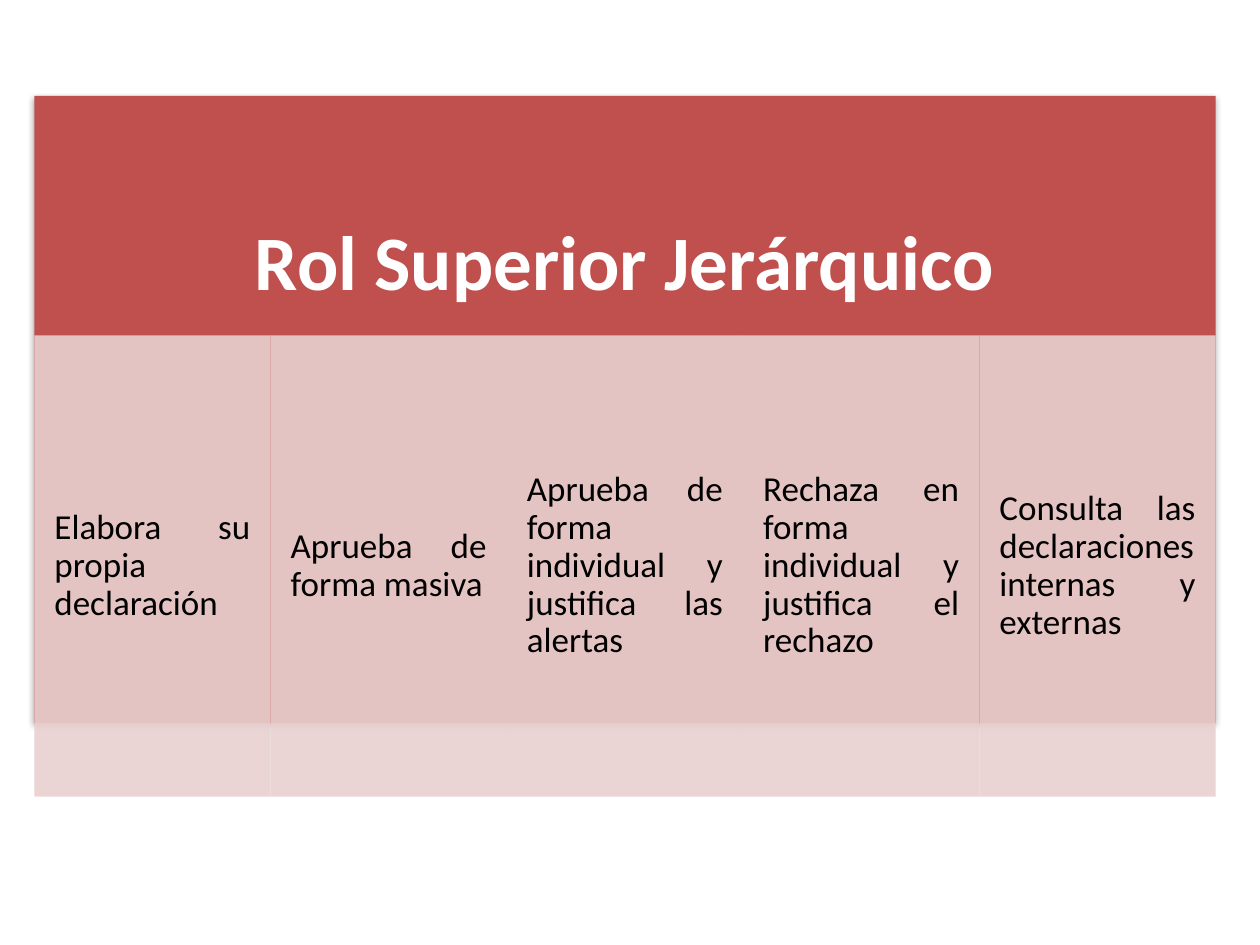
"""Build a slide showing the hierarchical superior's role and its five tasks."""
from lxml.etree import SubElement
from pptx import Presentation
from pptx.dml.color import RGBColor
from pptx.enum.shapes import MSO_SHAPE
from pptx.enum.text import MSO_ANCHOR, MSO_AUTO_SIZE, PP_ALIGN
from pptx.oxml.ns import qn
from pptx.util import Pt


def rgb(value):
    return RGBColor.from_string(value)


class Deck:
    font = "Calibri"
    red, pink, white, black = "C0504D", "E8D0D0", "FFFFFF", "000000"

    def __init__(self, slide):
        self.slide = slide

    def place(self, sp, x, y, w, h):
        sp.left, sp.top, sp.width, sp.height = Pt(x), Pt(y), Pt(w), Pt(h)

    def rect(self, x, y, w, h, fill):
        sp = self.slide.shapes.add_shape(MSO_SHAPE.RECTANGLE, Pt(x), Pt(y), Pt(w), Pt(h))
        sp.shadow.inherit = False
        sp.fill.solid()
        sp.fill.fore_color.rgb = rgb(fill)
        sp.line.fill.background()
        return sp

    def text(self, sp, words, size, color, align, inset_x, inset_y, bold=False):
        tf = sp.text_frame
        tf.word_wrap = True
        tf.auto_size = MSO_AUTO_SIZE.NONE
        tf.vertical_anchor = MSO_ANCHOR.MIDDLE
        tf.margin_left = tf.margin_right = Pt(inset_x)
        tf.margin_top = tf.margin_bottom = Pt(inset_y)
        p = tf.paragraphs[0]
        p.alignment = align
        p.line_spacing = 0.9
        r = p.add_run()
        r.text = words
        r.font.name, r.font.size, r.font.bold = self.font, Pt(size), bold
        r.font.color.rgb = rgb(color)

    def panel(self, x, y, w, h):
        sp = self.rect(x, y, w, h, self.red)
        effects = sp._element.spPr.find(qn("a:effectLst"))
        shadow = SubElement(effects, qn("a:outerShdw"), blurRad=str(Pt(3.1)),
                            dist=str(Pt(1.8)), dir="5400000", rotWithShape="0")
        color = SubElement(shadow, qn("a:srgbClr"), val=self.black)
        SubElement(color, qn("a:alpha"), val="35000")

    def title(self, x, y, w, h, words):
        sp = self.slide.shapes.title
        self.slide.shapes._spTree.append(sp._element)
        self.place(sp, x, y, w, h)
        self.text(sp, words, 44, self.white, PP_ALIGN.CENTER, 24.5, 24.5, bold=True)

    def column(self, x, y, w, h, words):
        sp = self.rect(x, y, w, h, self.pink)
        color = sp._element.spPr.find(qn("a:solidFill"))[0]
        SubElement(color, qn("a:alpha"), val="90000")
        self.text(sp, words, 20, self.black, PP_ALIGN.JUSTIFY, 11.5, 2)


def main():
    prs = Presentation()
    prs.slide_width, prs.slide_height = Pt(720), Pt(540)
    deck = Deck(prs.slides.add_slide(prs.slide_layouts[5]))
    tasks = [
        "Elabora su propia declaración",
        "Aprueba de forma masiva",
        "Aprueba de forma individual y justifica las alertas",
        "Rechaza en forma individual y justifica el rechazo",
        "Consulta las declaraciones internas y externas",
    ]
    left, top, col_w = 19.6, 54.8, 135
    width = col_w * len(tasks)
    deck.panel(left, top, width, 358.5)
    deck.title(left, top, width, 193.5, "Rol Superior Jerárquico")
    for i, task in enumerate(tasks):
        deck.column(left + i * col_w, 191.6, col_w, 263.6, task)
    prs.save("out.pptx")


if __name__ == "__main__":
    main()
